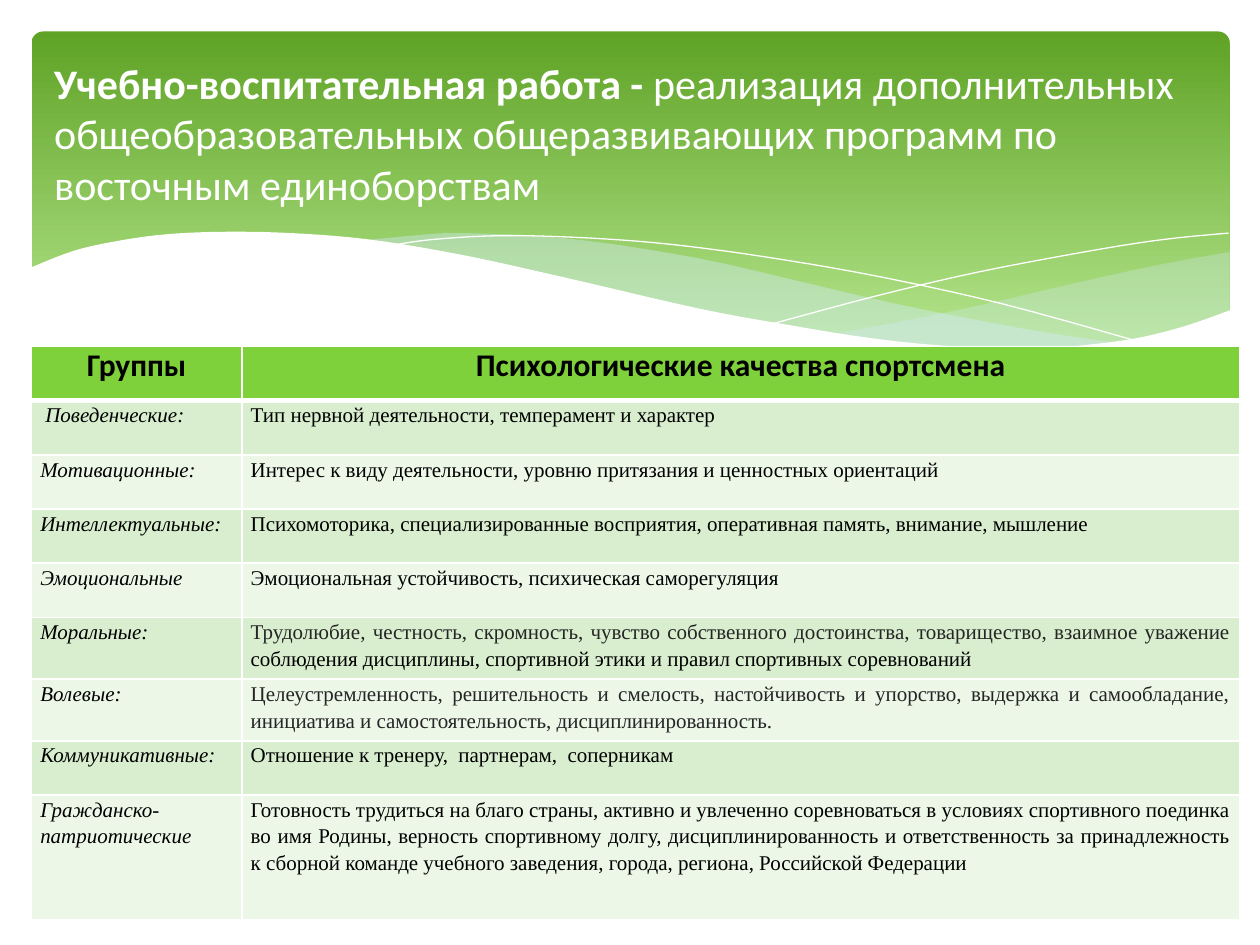
from lxml.etree import SubElement
from pptx import Presentation
from pptx.dml.color import RGBColor
from pptx.enum.shapes import MSO_SHAPE
from pptx.enum.text import MSO_ANCHOR, MSO_AUTO_SIZE, PP_ALIGN
from pptx.oxml.ns import qn
from pptx.util import Inches, Pt

WHITE, BLACK, GRAY = "FFFFFF", "000000", "252525"
HEAD, BANDS = "7FD13B", ("D8EECE", "ECF7E8")
TITLE = [
    ("Учебно-воспитательная работа - ", True),
    ("реализация дополнительных общеобразовательных общеразвивающих "
     "программ по восточным единоборствам", False),
]
HEADER = ("Группы", "Психологические качества спортсмена")
# Group, then the runs of its description as (text, colour)
GROUPS = [
    ("Поведенческие:", [("Тип нервной деятельности, темперамент и характер", BLACK)]),
    ("Мотивационные:", [("Интерес к виду деятельности, уровню притязания и "
                         "ценностных ориентаций", BLACK)]),
    ("Интеллектуальные:", [("Психомоторика, специализированные восприятия, "
                            "оперативная память, внимание, мышление", BLACK)]),
    ("Эмоциональные", [("Эмоциональная устойчивость, психическая саморегуляция", BLACK)]),
    ("Моральные:", [("Трудолюбие, честность, скромность, чувство собственного "
                     "достоинства, товарищество, взаимное уважение ", GRAY),
                    ("соблюдения дисциплины, спортивной этики и правил "
                     "спортивных соревнований", BLACK)]),
    ("Волевые:", [("Целеустремленность, решительность и смелость, настойчивость и "
                   "упорство, выдержка и самообладание, инициатива и "
                   "самостоятельность, дисциплинированность.", GRAY)]),
    ("Коммуникативные:", [("Отношение к тренеру,  партнерам,  соперникам", BLACK)]),
    ("Гражданско-патриотические", [
        ("Готовность трудиться на благо страны, активно и увлеченно соревноваться "
         "в условиях спортивного поединка во имя Родины, верность спортивному "
         "долгу, дисциплинированность и ответственность за принадлежность к сборной "
         "команде учебного заведения, города, региона, Российской Федерации", BLACK)]),
]
COLS = (1.67, 7.92)
ROW, TALL, LAST = 0.43, 0.49, 0.99
ROWS = [ROW] * 5 + [TALL] * 2 + [ROW, LAST]

# Waves: smooth curves, each through a few points
RIGHT = [
    [(9.76, 2), (9.21, 2.1), (8.61, 2.23), (7.79, 2.42), (7.06, 2.57), (6.61, 2.65)],
    [(6.61, 2.65), (7.19, 2.72), (7.69, 2.77), (8.14, 2.78), (8.63, 2.75),
     (9.05, 2.69), (9.42, 2.59), (9.76, 2.47)],
]
MIDDLE = [
    [(8.93, 2.73), (8.37, 2.65), (7.75, 2.54), (7.06, 2.4), (6.29, 2.22), (5.69, 2.08),
     (5.14, 1.98), (4.65, 1.91), (4.2, 1.87), (3.61, 1.85), (3.28, 1.87), (2.86, 1.91)],
    [(2.86, 1.91), (3.42, 1.99), (4.04, 2.11), (4.49, 2.22), (5.3, 2.4), (6.01, 2.55),
     (6.65, 2.66), (7.22, 2.74), (7.73, 2.77), (8.18, 2.78), (8.57, 2.77), (8.93, 2.73)],
]
FRONT = [
    [(9.77, 2.46), (9.4, 2.59), (8.99, 2.69), (8.5, 2.75), (8.09, 2.77), (7.44, 2.74),
     (6.88, 2.68), (6.26, 2.58), (5.55, 2.45), (4.47, 2.2), (3.65, 2.02), (2.92, 1.9),
     (2.3, 1.85), (1.77, 1.84), (1.32, 1.86), (0.95, 1.91), (0.59, 1.99), (0.23, 2.13)],
    [(0.23, 3.29), (9.77, 3.29)],
]
FALL = [[(3.09, 1.95), (3.44, 1.9), (4.01, 1.87), (4.69, 1.89), (5.33, 1.94),
         (6.08, 2.04), (6.95, 2.19), (7.95, 2.41), (9.07, 2.72)]]
RISE = [[(6.13, 2.57), (6.95, 2.35), (7.76, 2.16), (8.66, 1.99), (9.24, 1.9), (9.75, 1.85)]]
WAVES = [(RIGHT, "D6ECFF", 29), (MIDDLE, "D6ECFF", 40), (FALL, None, 0),
         (RISE, None, 0), (FRONT, WHITE, 100)]


def rgb(code):
    return RGBColor.from_string(code)


def smooth(pts, steps=5):
    """Sample a Catmull-Rom spline through the points."""
    ends = [pts[0], *pts, pts[-1]]
    out = [pts[0]]
    for a, b, c, d in zip(ends, ends[1:], ends[2:], ends[3:]):
        for k in range(1, steps + 1):
            t = k / steps
            out.append(tuple(
                (2 * q + (r - p) * t + (2 * p - 5 * q + 4 * r - s) * t ** 2
                 + (3 * q - p - 3 * r + s) * t ** 3) / 2
                for p, q, r, s in zip(a, b, c, d)))
    return out


def wave(shapes, parts, color, alpha):
    """Draw a filled wave, or an open white line when color is None."""
    pts = [(Inches(x), Inches(y)) for part in parts for x, y in smooth(part)]
    pen = shapes.build_freeform(*pts[0], scale=1.0)
    pen.add_line_segments(pts[1:], close=color is not None)
    shape = pen.convert_to_shape()
    shape.shadow.inherit = False
    if color is None:
        shape.fill.background()
        shape.line.color.rgb = rgb(WHITE)
        shape.line.width = Pt(0)
        return
    shape.line.fill.background()
    shape.fill.solid()
    shape.fill.fore_color.rgb = rgb(color)
    if alpha < 100:
        tint = next(shape.fill._xPr.iter(qn("a:srgbClr")))
        SubElement(tint, qn("a:alpha"), val=str(alpha * 1000))


def write(para, text, color, **style):
    run = para.add_run()
    run.text = text
    run.font.color.rgb = rgb(color)
    for key, value in style.items():
        setattr(run.font, key, value)


def dress(cell, row):
    """Set a cell's margins, white borders and fill."""
    for side, gap in dict(left=0.07, right=0.07, top=0, bottom=0).items():
        setattr(cell, "margin_" + side, Inches(gap))
    props = cell._tc.get_or_add_tcPr()
    thick = {0: "B", 1: "T"}.get(row)
    for side in "LRTB":
        width = Pt(3 if side == thick else 1)
        edge = SubElement(props, qn("a:ln" + side), w=str(width))
        SubElement(SubElement(edge, qn("a:solidFill")), qn("a:srgbClr"), val=WHITE)
    cell.fill.solid()
    cell.fill.fore_color.rgb = rgb(BANDS[(row - 1) % 2] if row else HEAD)


def banner(shapes):
    box = shapes.add_shape(MSO_SHAPE.ROUNDED_RECTANGLE, Inches(0.25), Inches(0.25),
                           Inches(9.51), Inches(2.7))
    box.adjustments[0] = 0.034
    box.shadow.inherit = False
    box.line.fill.background()
    box.fill.gradient()
    box.fill.gradient_angle = 270
    for stop, (color, place) in zip(box.fill.gradient_stops, [("5FA326", 0), ("B2E389", 0.9)]):
        stop.color.rgb = rgb(color)
        stop.position = place


def heading(shapes):
    title = shapes.title
    shapes._spTree.append(title._element)  # in front of the waves
    for key, value in dict(left=0.33, top=0.37, width=9.33, height=1.37).items():
        setattr(title, key, Inches(value))
    frame = title.text_frame
    frame.auto_size = MSO_AUTO_SIZE.NONE
    frame.word_wrap = True
    frame.vertical_anchor = MSO_ANCHOR.MIDDLE
    para = frame.paragraphs[0]
    para.alignment = PP_ALIGN.LEFT
    for text, bold in TITLE:
        write(para, text, WHITE, size=Pt(24), name="Calibri", bold=bold)


def grid(shapes):
    table = shapes.add_table(len(ROWS), len(COLS), Inches(0.25), Inches(2.75),
                             Inches(sum(COLS)), Inches(sum(ROWS))).table
    for col, width in zip(table.columns, COLS):
        col.width = Inches(width)
    lines = [[[(text, BLACK)] for text in HEADER]]
    lines += [[[(name, BLACK)], runs] for name, runs in GROUPS]
    for r, line in enumerate(lines):
        table.rows[r].height = Inches(ROWS[r])
        for c, runs in enumerate(line):
            cell = table.cell(r, c)
            dress(cell, r)
            para = cell.text_frame.paragraphs[0]
            para.alignment = PP_ALIGN.JUSTIFY if r else PP_ALIGN.CENTER
            para.line_spacing = 1.15 if r else 1.0
            style = (dict(size=Pt(12), name="Times New Roman", bold=False, italic=c == 0)
                     if r else dict(size=Pt(18), name="Calibri", bold=True))
            for text, color in runs:
                write(para, text, color, **style)
    table.cell(1, 0).margin_left = Inches(0.11)


def main():
    deck = Presentation()
    deck.slide_width, deck.slide_height = Inches(10), Inches(7.5)
    shapes = deck.slides.add_slide(deck.slide_layouts[5]).shapes
    banner(shapes)
    for parts, color, alpha in WAVES:
        wave(shapes, parts, color, alpha)
    heading(shapes)
    grid(shapes)
    deck.save("out.pptx")


if __name__ == "__main__":
    main()
